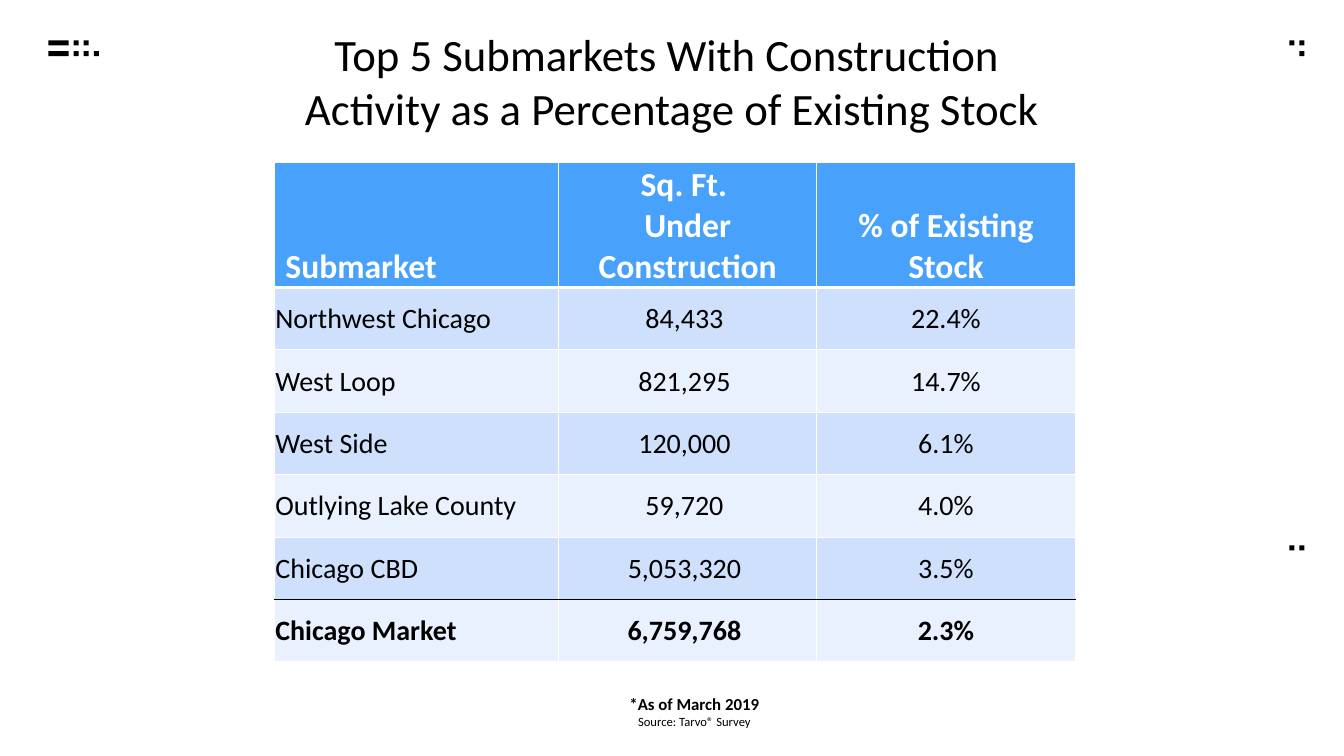
from lxml import etree
from pptx import Presentation
from pptx.dml.color import RGBColor
from pptx.enum import shapes, text
from pptx.oxml import ns
from pptx.util import Pt

FONT = "Calibri"
BLACK, WHITE, BLUE = "000000", "FFFFFF", "48A1FA"
BANDS = ["CFE0FD", "E9F0FE"]
CENTER, LEFT = text.PP_ALIGN.CENTER, text.PP_ALIGN.LEFT
DOT, BAR, STEP, ROW_STEP = 3.6, 14.4, 7.2, 7.7

HEADER = ["Submarket", "Sq. Ft. \nUnder Construction", "% of Existing Stock"]
SUBMARKETS = [
    ["Northwest Chicago", "84,433 ", "22.4%"],
    ["West Loop", "821,295 ", "14.7%"],
    ["West Side", "120,000 ", "6.1%"],
    ["Outlying Lake County", "59,720 ", "4.0%"],
    ["Chicago CBD", "5,053,320 ", "3.5%"],
    ["Chicago Market", "6,759,768 ", "2.3%"],
]


def rgb(color):
    return RGBColor.from_string(color)


def style(p, size, color=BLACK, bold=False, align=CENTER):
    p.alignment = align
    p.font.name = FONT
    p.font.size = Pt(size)
    p.font.bold = bold
    p.font.color.rgb = rgb(color)


def add_text(s, x, y, w, h, lines, inset):
    tf = s.shapes.add_textbox(Pt(x), Pt(y), Pt(w), Pt(h)).text_frame
    tf.word_wrap = True
    tf.margin_left = tf.margin_right = Pt(2 * inset)
    tf.margin_top = tf.margin_bottom = Pt(inset)
    tf.text = "\n".join(line for line, _, _ in lines)
    for p, (_, size, bold) in zip(tf.paragraphs, lines):
        style(p, size, bold=bold)


def add_marks(s, x, y, marks):
    for dx, row, width in marks:
        sp = s.shapes.add_shape(shapes.MSO_SHAPE.RECTANGLE, Pt(x + dx),
                                Pt(y + row * ROW_STEP), Pt(width), Pt(DOT))
        sp.shadow.inherit = False
        sp.fill.solid()
        sp.fill.fore_color.rgb = rgb(BLACK)
        sp.line.fill.background()


def add_border(cell, side, color, width):
    tc_pr = cell._tc.get_or_add_tcPr()
    ln = etree.SubElement(tc_pr, ns.qn(f"a:ln{side}"), w=str(Pt(width)))
    fill = etree.SubElement(ln, ns.qn("a:solidFill"))
    etree.SubElement(fill, ns.qn("a:srgbClr"), val=color)


def add_submarkets(s, x, y, widths, header_height, row_height):
    rows = [HEADER] + SUBMARKETS
    last = len(rows) - 1
    height = header_height + last * row_height
    table = s.shapes.add_table(len(rows), len(widths), Pt(x), Pt(y),
                               Pt(sum(widths)), Pt(height)).table
    for col, width in zip(table.columns, widths):
        col.width = Pt(width)
    edges = [(WHITE, 1)] * (len(rows) + 1)
    edges[1], edges[last] = (WHITE, 3), (BLACK, 1)
    for i, values in enumerate(rows):
        head = i == 0
        table.rows[i].height = Pt(header_height if head else row_height)
        for j, value in enumerate(values):
            cell = table.cell(i, j)
            cell.margin_left = cell.margin_right = cell.margin_top = Pt(0.7)
            cell.margin_bottom = 0
            cell.vertical_anchor = (text.MSO_ANCHOR.BOTTOM if head
                                    else text.MSO_ANCHOR.MIDDLE)
            for side, edge in zip("LRTB", [(WHITE, 1), (WHITE, 1), edges[i], edges[i + 1]]):
                add_border(cell, side, *edge)
            cell.fill.solid()
            cell.fill.fore_color.rgb = rgb(BLUE if head else BANDS[(i - 1) % 2])
            cell.text = value
            for p in cell.text_frame.paragraphs:
                style(p, 24 if head else 20, WHITE if head else BLACK,
                      head or i == last, CENTER if j else LEFT)
    p = table.cell(0, 0).text_frame.paragraphs[0]
    p._p.get_or_add_pPr().set("marL", str(Pt(7.2)))


def main():
    prs = Presentation()
    prs.slide_width, prs.slide_height = Pt(960), Pt(540)
    s = prs.slides.add_slide(prs.slide_layouts[6])
    first_dot = BAR + DOT
    grid = [(0, 0, BAR), (0, 1, BAR)]
    grid += [(first_dot + k * STEP, row, DOT)
             for row, count in enumerate([2, 3]) for k in range(count)]
    add_marks(s, 34.6, 28.8, grid)
    pair = [(0, 0, DOT), (STEP, 0, DOT)]
    add_marks(s, 921, 28.8, pair + [(STEP, 1, DOT)])
    add_marks(s, 921, 389.5, pair)
    add_text(s, 151, 491.8, 690, 32.4,
             [("*As of March 2019", 12, True), ("Source: Tarvo® Survey", 9, False)], 3.6)
    add_text(s, 0, 19.4, 960, 77.8,
             [("Top 5 Submarkets With Construction ", 32, False),
              ("Activity as a Percentage of Existing Stock", 32, False)], 0)
    add_submarkets(s, 196, 116, [203, 184.5, 184.5], 89.3, 44.6)
    prs.save("out.pptx")


if __name__ == "__main__":
    main()
